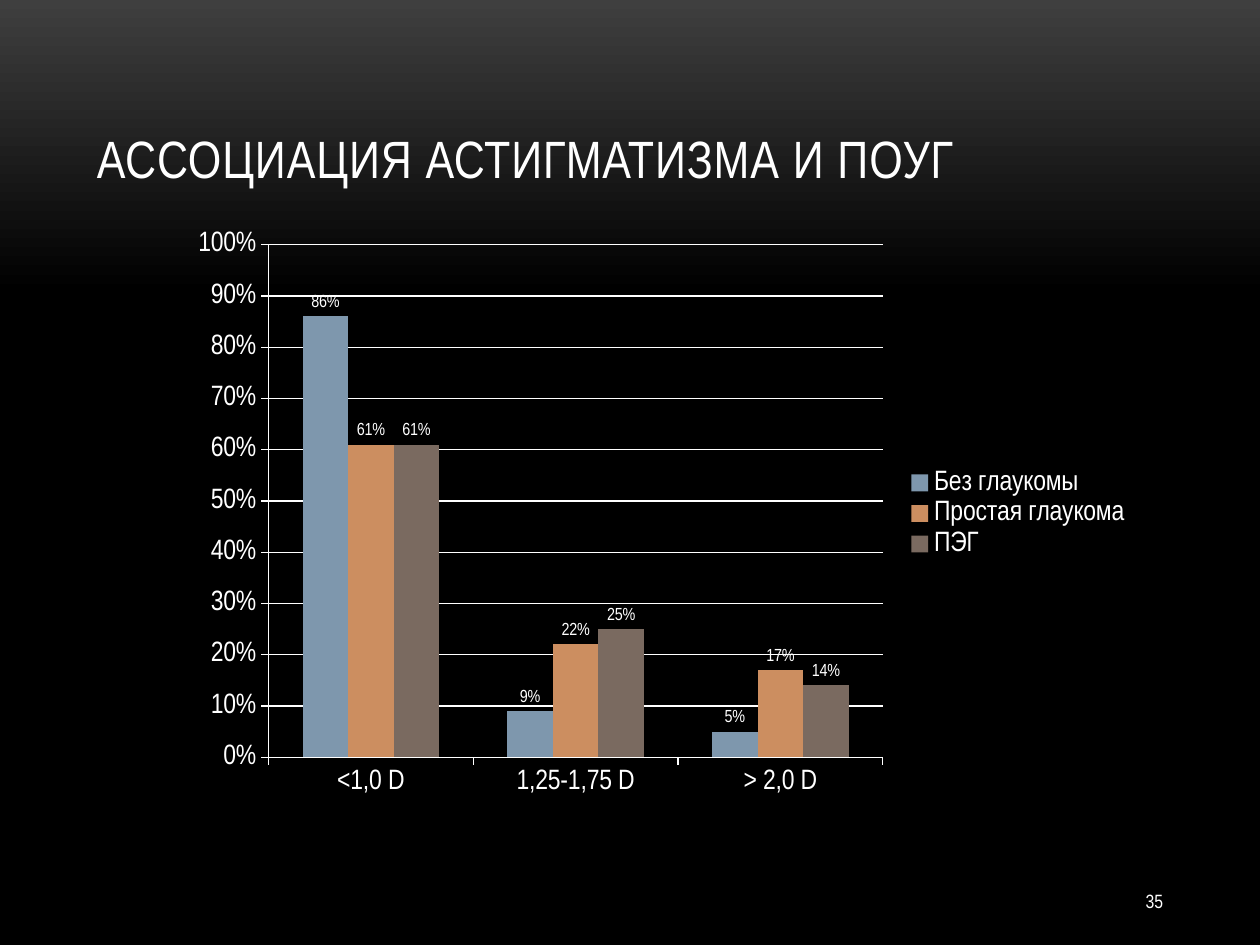
from copy import deepcopy
from pptx import Presentation, util as u
from pptx.chart.data import CategoryChartData
from pptx.dml.color import RGBColor
from pptx.enum import chart as ch, text
from pptx.oxml.ns import qn

HUES = {"text": "FFFFFF", "top": "3F3F3F", "base": "000000",
        "none": "7E97AD", "plain": "CC8E60", "peg": "7A6A60"}
FONT = "Arial Narrow"
TITLE = "АССОЦИАЦИЯ АСТИГМАТИЗМА И ПОУГ"
PAGE = "35"
CATS = ["<1,0 D", "1,25-1,75 D", "> 2,0 D"]
SERIES = [
    ("Без глаукомы", "none", (0.86, 0.09, 0.05)),
    ("Простая глаукома", "plain", (0.61, 0.22, 0.17)),
    ("ПЭГ", "peg", (0.61, 0.25, 0.14)),
]


def rgb(name):
    return RGBColor.from_string(HUES[name])


def style(font, size):
    font.name, font.size = FONT, u.Pt(size)
    font.color.rgb = rgb("text")


def paint(slide):
    fill = slide.background.fill
    fill.gradient()
    fill.gradient_angle = 270
    for stop, name, pos in zip(fill.gradient_stops, ("top", "base"), (0, 0.31)):
        stop.color.rgb = rgb(name)
        stop.position = pos
    last = list(slide.element.iter(qn("a:gs")))[-1]
    end = deepcopy(last)
    end.set("pos", "100000")
    last.addnext(end)


def label(slide, words, box, size, anchor, align):
    frame = slide.shapes.add_textbox(*map(u.Inches, box)).text_frame
    frame.word_wrap = True
    frame.vertical_anchor = anchor
    para = frame.paragraphs[0]
    para.text, para.alignment = words, align
    style(para.font, size)
    return para


def plot(slide, box):
    data = CategoryChartData(number_format="0%")
    data.categories = CATS
    for name, _, vals in SERIES:
        data.add_series(name, vals)
    kind = ch.XL_CHART_TYPE.COLUMN_CLUSTERED
    chart = slide.shapes.add_chart(kind, *map(u.Inches, box), data).chart
    style(chart.font, 10)
    chart.has_title = False
    chart.has_legend = True
    chart.legend.position = ch.XL_LEGEND_POSITION.RIGHT
    chart.legend.include_in_layout = False
    style(chart.legend.font, 16)

    for axis in (chart.category_axis, chart.value_axis):
        style(axis.tick_labels.font, 16)
        axis.major_tick_mark = ch.XL_TICK_MARK.OUTSIDE
        axis.format.line.color.rgb = rgb("text")
        axis.format.line.width = u.Pt(0.75)
    axis = chart.value_axis
    axis.minimum_scale, axis.maximum_scale, axis.major_unit = 0, 1, 0.1
    axis.tick_labels.number_format = "0%"
    axis.tick_labels.number_format_is_linked = False
    axis.has_major_gridlines = True
    axis.major_gridlines.format.line.color.rgb = rgb("text")
    axis.major_gridlines.format.line.width = u.Pt(0.75)

    bars = chart.plots[0]
    bars.gap_width, bars.overlap = 150, 0
    bars.vary_by_categories = False
    for row, (_, hue, _) in zip(bars.series, SERIES):
        row.format.fill.solid()
        row.format.fill.fore_color.rgb = rgb(hue)
        tags = row.data_labels
        tags.show_value = True
        tags.number_format, tags.number_format_is_linked = "0%", False
        tags.position = ch.XL_LABEL_POSITION.OUTSIDE_END
        style(tags.font, 10)


def main():
    deck = Presentation()
    deck.slide_width, deck.slide_height = u.Inches(10), u.Inches(7.5)
    slide = deck.slides.add_slide(deck.slide_layouts[6])
    paint(slide)
    head = label(slide, TITLE, (0.67, 0.3, 8.67, 1.25), 30,
                 text.MSO_ANCHOR.BOTTOM, text.PP_ALIGN.LEFT)
    head.runs[0].font._element.set("spc", "50")
    label(slide, PAGE, (8.25, 6.95, 1.08, 0.4), 11,
          text.MSO_ANCHOR.MIDDLE, text.PP_ALIGN.RIGHT)
    plot(slide, (1.42, 1.75, 7.66, 4.65))
    deck.save("out.pptx")


if __name__ == "__main__":
    main()
